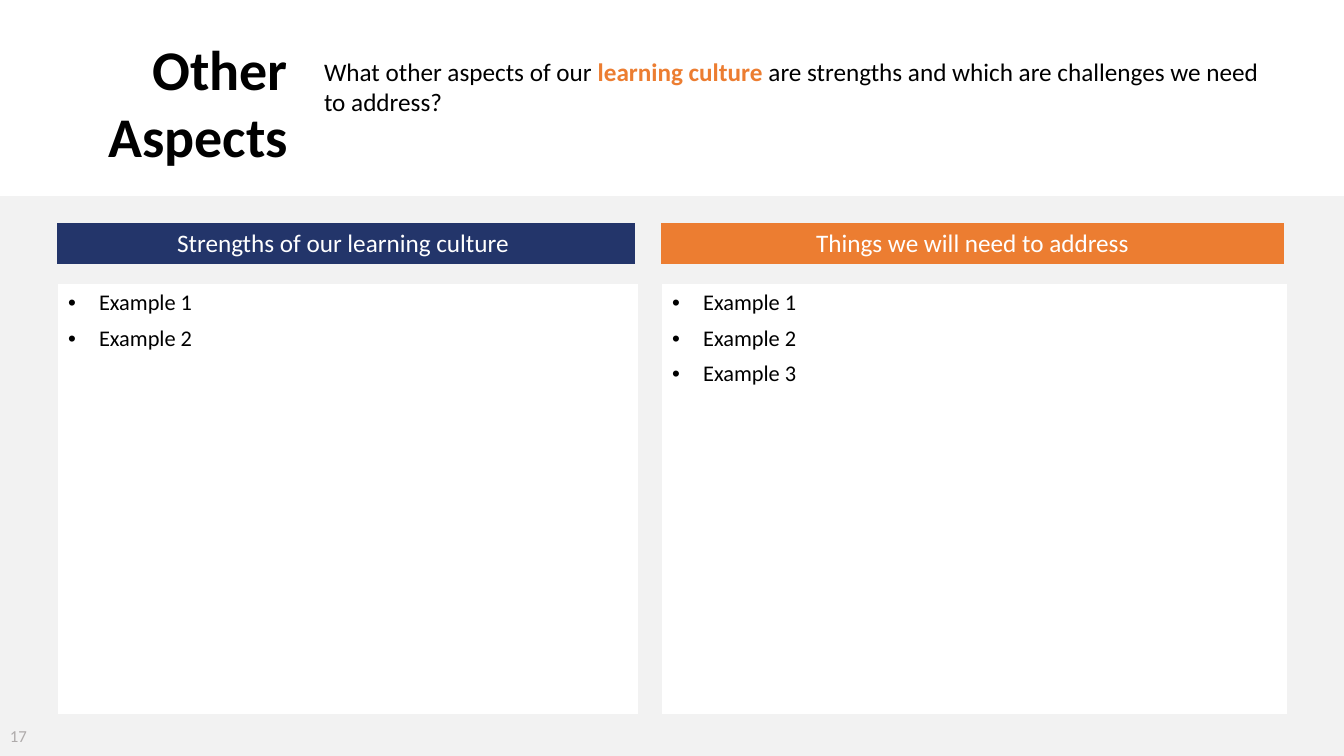
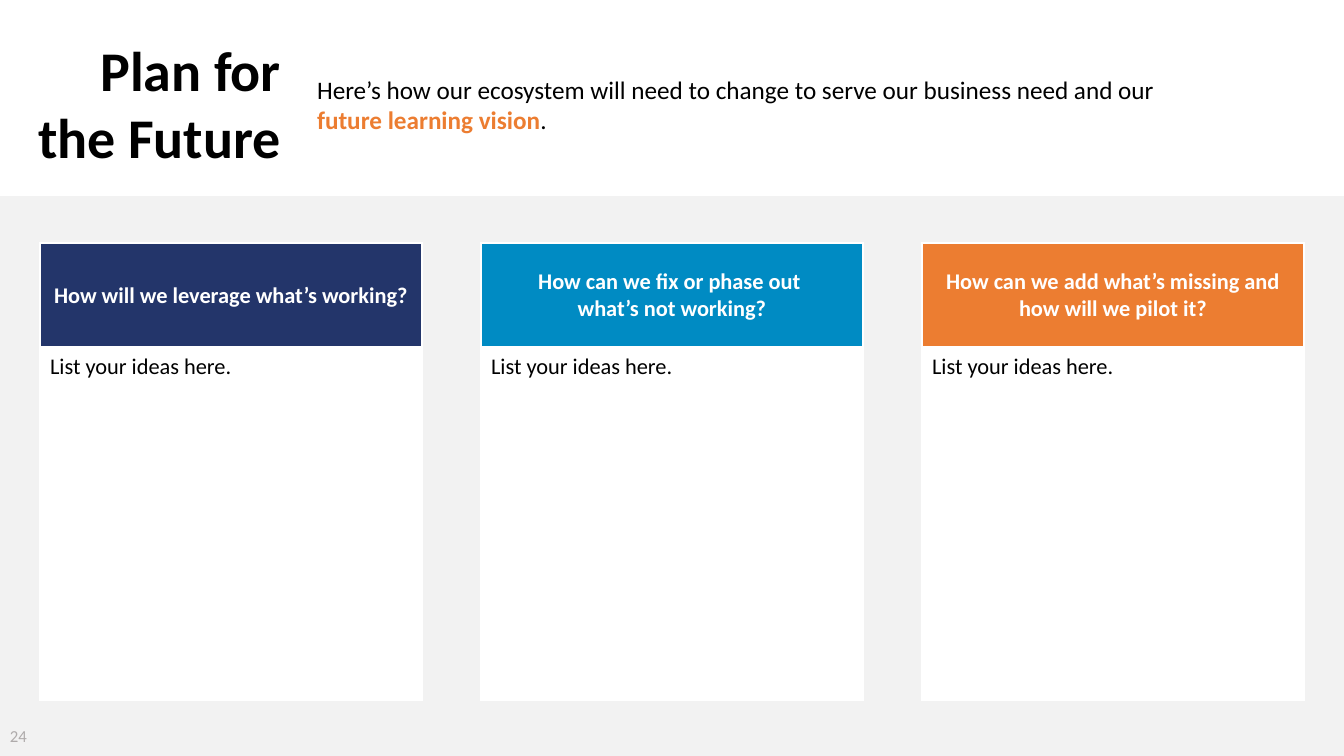
from lxml import etree
from pptx import Presentation, util as u
from pptx.dml.color import RGBColor
from pptx.enum import shapes, text
from pptx.oxml.ns import qn

PX = 12192000 / 1344
FONT = "Calibri"
BLACK = RGBColor(0x00, 0x00, 0x00)
WHITE = RGBColor(0xFF, 0xFF, 0xFF)
PALE = RGBColor(0xF2, 0xF2, 0xF2)
GREY = RGBColor(0xAF, 0xAB, 0xAB)
NAVY = RGBColor(0x23, 0x35, 0x6A)
BLUE = RGBColor(0x00, 0x8B, 0xC3)
ORANGE = RGBColor(0xEC, 0x7D, 0x31)
NO_STYLE = "{2D5ABB26-0587-4C30-8999-92F81FD0307C}"
LEFT, CENTER, RIGHT = text.PP_ALIGN.LEFT, text.PP_ALIGN.CENTER, text.PP_ALIGN.RIGHT
TOP, MIDDLE = text.MSO_ANCHOR.TOP, text.MSO_ANCHOR.MIDDLE


def style_text(tf, size, color=BLACK, bold=False, align=LEFT, anchor=TOP):
    tf.word_wrap = True
    tf.vertical_anchor = anchor
    for p in tf.paragraphs:
        p.alignment = align
        for r in p.runs:
            r.font.name, r.font.size, r.font.bold = FONT, u.Pt(size), bold
            r.font.color.rgb = color


def add_grid(s, x, y, widths, heights, fills):
    """Add an unstyled table whose cells take fills row by row."""
    box = [round(v * PX) for v in (x, y, sum(widths), sum(heights))]
    table = s.shapes.add_table(len(heights), len(widths), *box).table
    table.first_row = table.horz_banding = False
    table._tbl.tblPr.find(qn("a:tableStyleId")).text = NO_STYLE
    for column, width in zip(table.columns, widths):
        column.width = round(width * PX)
    for row, height in zip(table.rows, heights):
        row.height = round(height * PX)
    for cell, fill in zip(table.iter_cells(), fills):
        cell.fill.solid()
        cell.fill.fore_color.rgb = fill
    return table


prs = Presentation()
prs.slide_width, prs.slide_height = round(1344 * PX), round(756 * PX)

# Shared header, band and page number
HEADERS = [
    ("Other Aspects", (0, 29, 298, 146), (314, 51, 970, 72), "17",
     ["What other aspects of our ", "learning culture ",
      "are strengths and which are challenges we need to address?"]),
    ("Plan for\nthe Future", (18, 30, 273, 146), (307, 69, 997, 72), "24",
     ["Here’s how our ecosystem will need to change to serve our business need and our ",
      "\n", "future learning vision", "."]),
]
slides = []
for title, title_box, intro_box, number, intro in HEADERS:
    s = prs.slides.add_slide(prs.slide_layouts[1])
    slides.append(s)
    band = s.shapes.add_shape(shapes.MSO_SHAPE.RECTANGLE, 0, round(196 * PX),
                              prs.slide_width, round(560 * PX))
    band.shadow.inherit = False
    band.fill.solid()
    band.fill.fore_color.rgb = PALE
    band.line.fill.background()

    for sp, box in zip(s.placeholders, (title_box, intro_box)):
        sp.left, sp.top, sp.width, sp.height = [round(v * PX) for v in box]
        sp.text_frame.auto_size = text.MSO_AUTO_SIZE.NONE
    s.shapes.title.text_frame.text = title
    style_text(s.shapes.title.text_frame, 40, bold=True, align=RIGHT)

    tf = s.placeholders[1].text_frame
    p = tf.paragraphs[0]
    p.space_before = u.Pt(0)
    for part in intro:
        if part == "\n":
            p.add_line_break()
        else:
            p.add_run().text = part
    style_text(tf, 18)
    p.runs[1].font.bold = True
    p.runs[1].font.color.rgb = ORANGE
    pPr = p._p.get_or_add_pPr()
    pPr.set("marL", "0")
    pPr.set("indent", "0")
    etree.SubElement(pPr, qn("a:buNone"))

    page = s.shapes.add_textbox(0, round(716 * PX), round(60 * PX), round(40 * PX))
    page.text_frame.text = number
    style_text(page.text_frame, 12, GREY, anchor=MIDDLE)

aspects, plan = slides

# Strengths and challenges
lists = add_grid(aspects, 58, 284, [580, 23, 625], [430], [WHITE, PALE, WHITE])
for column, count in ((0, 2), (2, 3)):
    tf = lists.cell(0, column).text_frame
    tf.text = "\n".join(f"Example {n + 1}" for n in range(count))
    style_text(tf, 16)
    for p in tf.paragraphs:
        p.space_before = u.Pt(6)
        pPr = p._p.get_or_add_pPr()
        indent = round(31 * PX)
        pPr.set("marL", str(indent))
        pPr.set("indent", str(-indent))
        etree.SubElement(pPr, qn("a:buFont"), typeface="Arial")
        etree.SubElement(pPr, qn("a:buChar"), char="•")

for x, width, fill, heading in (
    (57, 578, NAVY, "Strengths of our learning culture "),
    (661, 623, ORANGE, "Things we will need to address"),
):
    cell = add_grid(aspects, x, 223, [width], [41], [fill]).cell(0, 0)
    cell.text_frame.text = heading
    style_text(cell.text_frame, 18, WHITE, align=CENTER)

# Three planning questions
QUESTIONS = [
    (NAVY, "How will we leverage what’s working?"),
    (BLUE, "How can we fix or phase out \vwhat’s not working?"),
    (ORANGE, "How can we add what’s missing and how will we pilot it?"),
]
for i, (fill, question) in enumerate(QUESTIONS):
    table = add_grid(plan, 40 + 441 * i, 243, [382], [105, 352], [fill, WHITE])
    head, ideas = table.iter_cells()
    head.text_frame.text = question
    style_text(head.text_frame, 16, WHITE, bold=True, align=CENTER)
    head.vertical_anchor = MIDDLE
    ideas.text_frame.text = "List your ideas here."
    style_text(ideas.text_frame, 16)
    for cell in (head, ideas):
        tcPr = cell._tc.get_or_add_tcPr()
        for n, side in enumerate(("lnL", "lnR", "lnT", "lnB")):
            points = 3 if cell is head and side == "lnB" else 1
            ln = etree.Element(qn(f"a:{side}"), w=str(u.Pt(points)))
            solid = etree.SubElement(ln, qn("a:solidFill"))
            etree.SubElement(solid, qn("a:srgbClr"), val=str(WHITE))
            tcPr.insert(n, ln)

prs.save("out.pptx")
